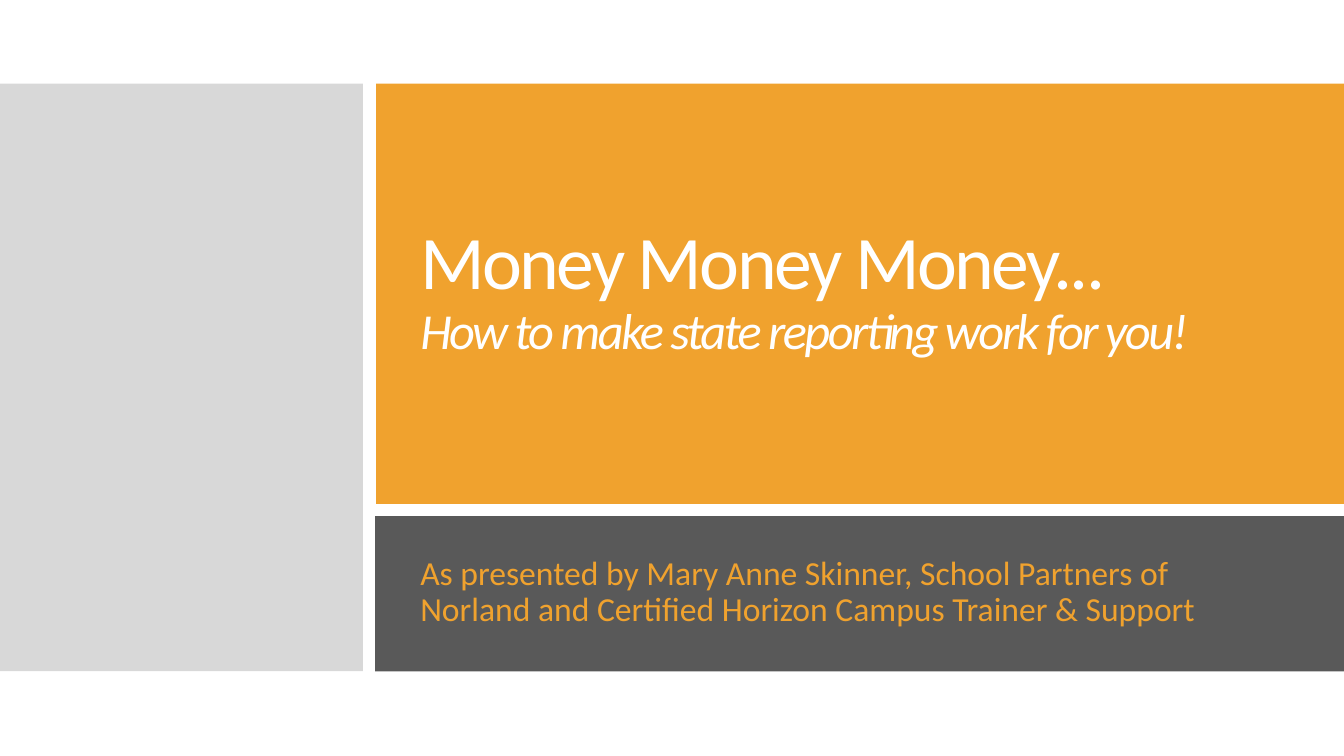
from dataclasses import dataclass

from pptx import Presentation
from pptx.dml.color import RGBColor as RGB
from pptx.enum.shapes import MSO_SHAPE as SHAPE
from pptx.util import Inches, Pt


@dataclass(frozen=True)
class Theme:
    font: str = "Calibri"
    white: str = "FFFFFF"
    gold: str = "F0A22E"
    dark: str = "595959"
    pale: str = "D8D8D8"
    title: int = 54
    tag: int = 36
    sub: int = 24
    tight: int = -180  # letter spacing, hundredths of a point


theme = Theme()
WIDTH, HEIGHT = 13.33, 7.5


def add_panel(slide, box, color):
    panel = slide.shapes.add_shape(SHAPE.RECTANGLE, *map(Inches, box))
    panel.shadow.inherit = False
    panel.fill.solid()
    panel.fill.fore_color.rgb = RGB.from_string(color)
    panel.line.fill.background()


def add_para(slide, box):
    frame = slide.shapes.add_textbox(*map(Inches, box)).text_frame
    frame.word_wrap = True
    para = frame.paragraphs[0]
    para.line_spacing = 0.9
    return para


def add_run(para, text, size, color, italic=False, track=0):
    run = para.add_run()
    run.text = text
    font = run.font
    font.name, font.size, font.italic = theme.font, Pt(size), italic
    font.color.rgb = RGB.from_string(color)
    if track:
        font._element.set("spc", str(track))


def title_area(slide, box):
    left, top, width, height = box
    add_panel(slide, box, theme.gold)
    para = add_para(slide, (left + 0.34, top + 1.35, 7.86, 1.6))
    add_run(para, "Money Money Money...", theme.title, theme.white,
            track=theme.tight)
    para.add_line_break()
    add_run(para, "How to make state reporting work for you!", theme.tag,
            theme.white, italic=True, track=theme.tight)


def sub_area(slide, box):
    left, top, width, height = box
    add_panel(slide, box, theme.dark)
    para = add_para(slide, (left + 0.35, top + 0.35, 8.41, 0.84))
    add_run(para, "As presented by Mary Anne Skinner, School Partners of "
            "Norland and Certified Horizon Campus Trainer & Support",
            theme.sub, theme.gold)


def title_slide(deck):
    slide = deck.slides.add_slide(deck.slide_layouts[6])
    top, base = 0.83, 6.66
    # Side panel
    add_panel(slide, (0, top, 3.6, base - top), theme.pale)
    # Title and subtitle bands reach the right edge
    title_area(slide, (3.73, top, WIDTH - 3.73, 4.17))
    sub_area(slide, (3.72, 5.12, WIDTH - 3.72, base - 5.12))


def main():
    deck = Presentation()
    deck.slide_width, deck.slide_height = Inches(WIDTH), Inches(HEIGHT)
    title_slide(deck)
    deck.save("out.pptx")


if __name__ == "__main__":
    main()
